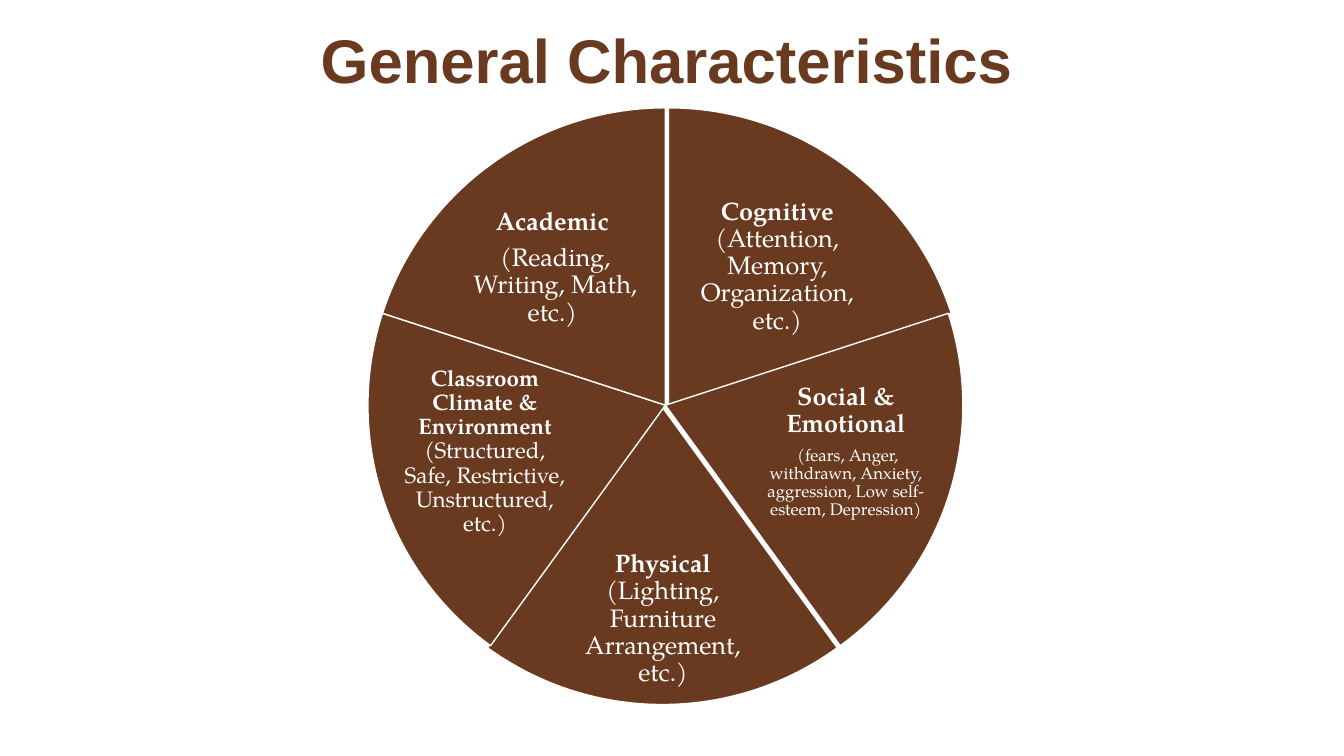
from pptx import Presentation, util as u
from pptx.dml.color import RGBColor
from pptx.enum import shapes, text

COLORS = {"brown": "6A3A20", "white": "FFFFFF"}
W, H = 13.33, 7.5
DIAMETER = 5.9
SWEEP = 360 / 5
DEGREE = 0.6  # adjustment units per degree

# Wedges clockwise from the top: circle offset, label box (relative to
# the wheel's box), then paragraphs of (text, size, bold) runs
WEDGES = [
    ((0.03, 0), (3.06, 0.89, 2, 1.37),
     [[("Cognitive", 18, True), (" (Attention, Memory, Organization, etc.)", 18, False)]]),
    ((0, 0), (3.86, 2.67, 1.76, 1.48),
     [[("Social & Emotional", 18, True)],
      [(" ", 12, True),
       ("(fears, Anger, withdrawn, Anxiety, aggression, Low self-esteem, Depression)", 12, False)]]),
    ((-0.03, 0.02), (1.87, 4.44, 2.11, 1.26),
     [[("Physical", 18, True), (" (Lighting, Furniture Arrangement, etc.)", 18, False)]]),
    ((0, 0), (0.28, 2.67, 1.76, 1.48),
     [[("Classroom Climate & Environment ", 16, True),
       ("(Structured, Safe, Restrictive, Unstructured, etc.)", 16, False)]]),
    ((0, 0), (0.86, 0.9, 2, 1.37),
     [[("Academic ", 18, True)], [("(Reading, Writing, Math, etc.) ", 18, False)]]),
]


def rgb(name):
    return RGBColor.from_string(COLORS[name])


def add_text(s, box, paragraphs, font, color, anchor, inset, line=1.0, after=0):
    tf = s.shapes.add_textbox(*map(u.Inches, box)).text_frame
    tf.word_wrap = True
    tf.vertical_anchor = anchor
    tf.margin_left = tf.margin_right = tf.margin_top = tf.margin_bottom = u.Inches(inset)
    for i, runs in enumerate(paragraphs):
        p = tf.add_paragraph() if i else tf.paragraphs[0]
        p.alignment = text.PP_ALIGN.CENTER
        p.line_spacing = line
        p.space_after = u.Pt(after)
        for words, size, bold in runs:
            r = p.add_run()
            r.text = words
            r.font.name, r.font.size, r.font.bold = font, u.Pt(size), bold
            r.font.color.rgb = rgb(color)


def add_title(s, box):
    add_text(s, box, [[("General Characteristics ", 44, True)]], "Arial", "brown",
             text.MSO_ANCHOR.BOTTOM, 0.05)


def add_wheel(s, left, top):
    for i, ((dx, dy), (x, y, w, h), paragraphs) in enumerate(WEDGES):
        # Wedge
        sp = s.shapes.add_shape(shapes.MSO_SHAPE.PIE, u.Inches(left + dx), u.Inches(top + dy),
                                u.Inches(DIAMETER), u.Inches(DIAMETER))
        start = 270 + i * SWEEP
        sp.adjustments[0] = start % 360 * DEGREE
        sp.adjustments[1] = (start + SWEEP) % 360 * DEGREE
        sp.shadow.inherit = False
        sp.fill.solid()
        sp.fill.fore_color.rgb = rgb("brown")
        sp.line.color.rgb = rgb("white")
        sp.line.width = u.Pt(1)
        # Label
        add_text(s, (left + x, top + y, w, h), paragraphs, "TeX Gyre Pagella", "white",
                 text.MSO_ANCHOR.MIDDLE, 0.03, line=0.9, after=6.3)


def main():
    prs = Presentation()
    prs.slide_width, prs.slide_height = u.Inches(W), u.Inches(H)
    s = prs.slides.add_slide(prs.slide_layouts[6])
    add_title(s, (0.41, 0.33, 12.58, 0.67))
    add_wheel(s, 3.65, 1.07)
    prs.save("out.pptx")


if __name__ == "__main__":
    main()
